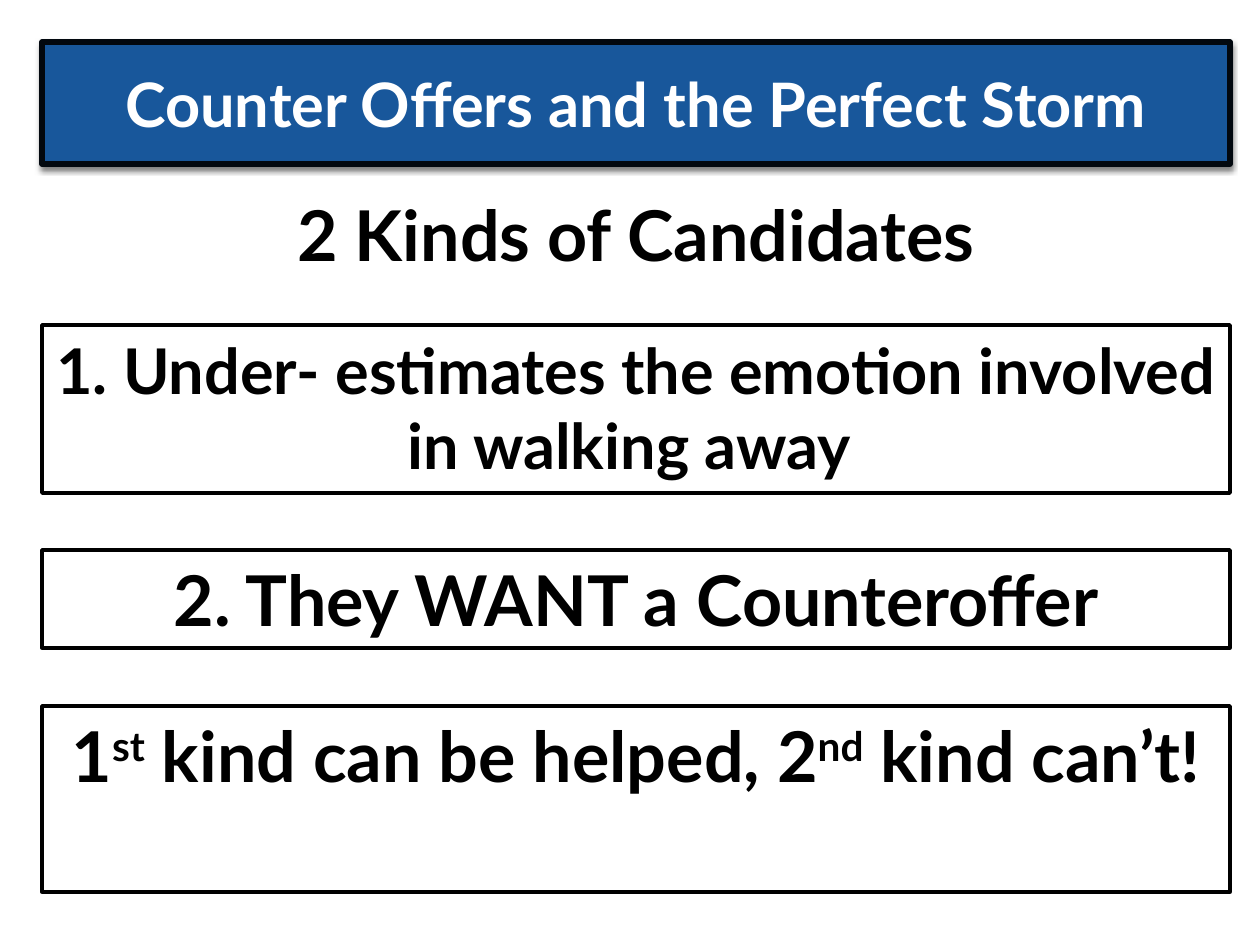
from dataclasses import dataclass

from lxml import etree
from pptx import Presentation
from pptx import util as u
from pptx.dml.color import RGBColor
from pptx.enum import shapes, text
from pptx.oxml import parse_xml
from pptx.oxml.ns import nsdecls, qn

PX = 914400 / 126
LEFT, WIDTH = 42, 1188
FONT = "Lato"


@dataclass(frozen=True)
class Panel:
    top: int
    height: int
    size: int
    wording: tuple[str, ...]  # every second part is a superscript
    line: float = 2


HEADING = Panel(42, 122, 35, ("Counter Offers and the Perfect Storm",), 3)
PANELS = (
    Panel(185, 98, 40, ("2 Kinds of Candidates",), 0),
    Panel(325, 168, 36,
          ("1. Under- estimates the emotion involved in walking away ",)),
    Panel(550, 98, 40, ("2. They WANT a Counteroffer",)),
    Panel(706, 186, 40,
          ("1", "st", " kind can be helped, 2", "nd", " kind can’t!")),
)


def px(length: int) -> int:
    return round(length * PX)


def color(value: str) -> RGBColor:
    return RGBColor.from_string(value)


def fill_panel(shape, panel: Panel, fill: str, line: str, ink: str,
               anchor) -> None:
    """Place, paint and letter a shape as the panel describes."""
    shape.left, shape.top = px(LEFT), px(panel.top)
    shape.width, shape.height = px(WIDTH), px(panel.height)
    shape.fill.solid()
    shape.fill.fore_color.rgb = color(fill)
    if panel.line:
        shape.line.color.rgb = color(line)
        shape.line.width = u.Pt(panel.line)
    else:
        shape.line.fill.background()

    frame = shape.text_frame
    frame.word_wrap = True
    frame.auto_size = text.MSO_AUTO_SIZE.NONE
    frame.vertical_anchor = anchor
    paragraph = frame.paragraphs[0]
    paragraph.alignment = text.PP_ALIGN.CENTER
    paragraph.font.name = FONT
    paragraph.font.size = u.Pt(panel.size)
    paragraph.font.bold = True
    paragraph.font.color.rgb = color(ink)
    for index, part in enumerate(panel.wording):
        run = paragraph.add_run()
        run.text = part
        if index % 2:
            run.font._element.set("baseline", "30000")


def add_drop_shadow(shape) -> None:
    shape.shadow.inherit = False
    effects = shape._element.spPr.find(qn("a:effectLst"))
    effects.append(parse_xml(
        f'<a:outerShdw {nsdecls("a")} blurRad="{u.Pt(3)}" dist="{u.Pt(2)}" '
        'dir="5400000" algn="ctr" rotWithShape="0">'
        '<a:srgbClr val="000000"><a:alpha val="50000"/></a:srgbClr>'
        '</a:outerShdw>'))


def main() -> None:
    deck = Presentation()
    deck.slide_width, deck.slide_height = u.Inches(10), u.Inches(7.5)
    slide = deck.slides.add_slide(deck.slide_layouts[5])

    heading = slide.shapes.title
    fill_panel(heading, HEADING, "18579B", "02080F", "FFFFFF",
               text.MSO_ANCHOR.MIDDLE)
    add_drop_shadow(heading)

    for panel in PANELS:
        box = slide.shapes.add_shape(
            shapes.MSO_SHAPE.RECTANGLE, 0, 0, px(WIDTH), px(panel.height))
        box.shadow.inherit = False
        fill_panel(box, panel, "FFFFFF", "000000", "000000",
                   text.MSO_ANCHOR.TOP)

    deck.save("out.pptx")


if __name__ == "__main__":
    main()
